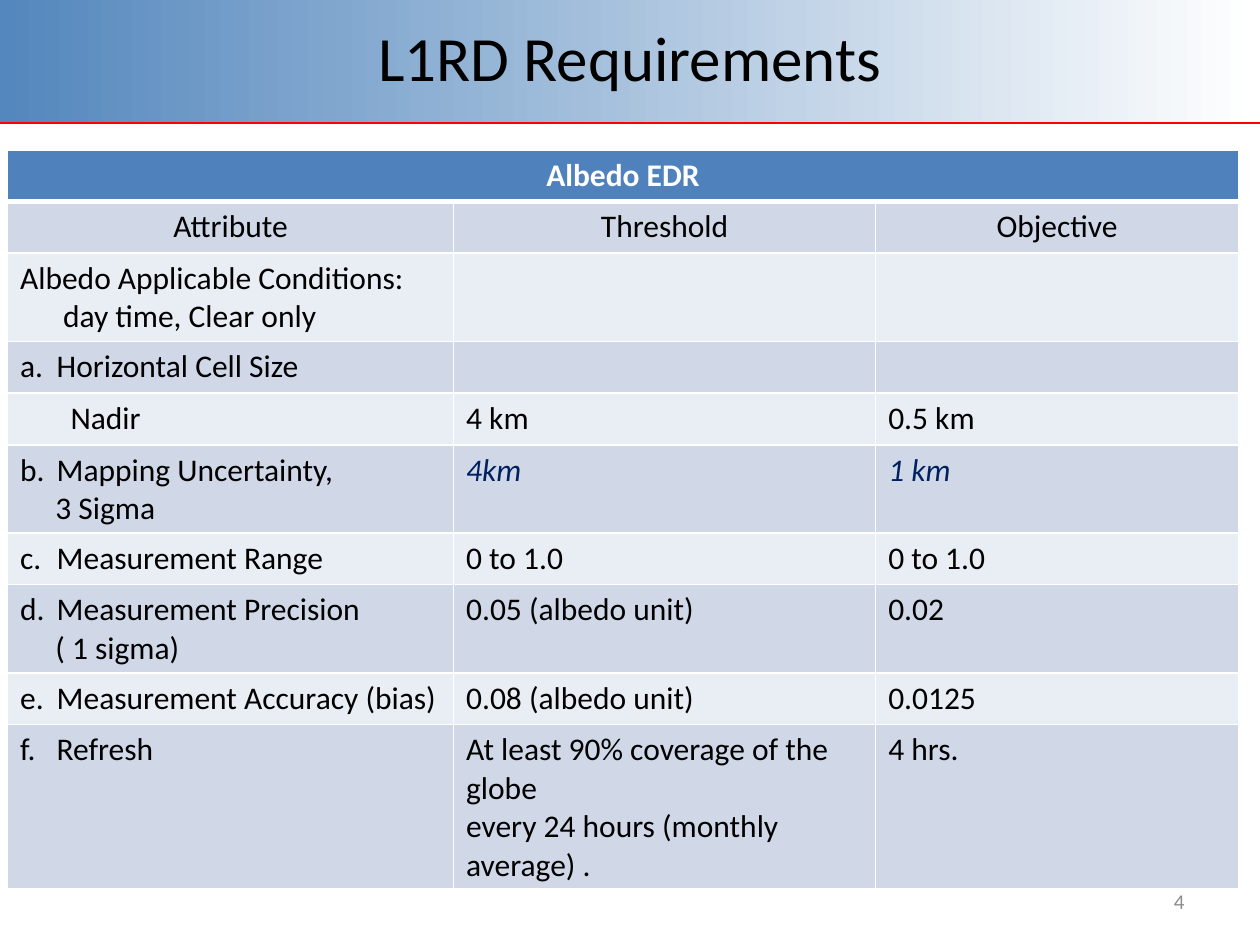
"""Build the L1RD requirements slide."""
from collections import namedtuple
from dataclasses import dataclass

from lxml import etree
from pptx import Presentation
from pptx import util as u
from pptx.dml.color import RGBColor
from pptx.enum import shapes, text
from pptx.oxml import ns

Box = namedtuple("Box", "left top width height")


@dataclass(frozen=True)
class Theme:
    """Hold the colours, font and type sizes of the slide."""
    font: str = "Calibri"
    title_size: int = 36
    body_size: int = 18
    number_size: int = 12
    ink: str = "000000"
    white: str = "FFFFFF"
    banner: str = "5487BD"
    rule: str = "FF0000"
    header: str = "4F81BD"
    bands: tuple = ("D0D8E8", "E9EDF4")
    draft: str = "002060"
    number: str = "8C8C8C"


THEME = Theme()
WIDTH, HEIGHT = u.Inches(10), u.Inches(7.5)
COLUMN_SHARES = (3.54, 3.35, 2.88)
LETTER_HANG = 0.29
ROWS = (
    ("Attribute", "Threshold", "Objective"),
    ("Albedo Applicable Conditions:\nday time, Clear only", "", ""),
    ("a.\tHorizontal Cell Size", "", ""),
    ("Nadir", "4 km", "0.5 km"),
    ("b.\tMapping Uncertainty,\n3 Sigma", "4km", "1 km"),
    ("c.\tMeasurement Range", "0 to 1.0", "0 to 1.0"),
    ("d.\tMeasurement Precision\n( 1 sigma)", "0.05 (albedo unit)", "0.02"),
    ("e.\tMeasurement Accuracy (bias)", "0.08 (albedo unit)", "0.0125"),
    ("f.\tRefresh", "At least 90% coverage of the globe\nevery 24 hours (monthly average) .",
     "4 hrs."),
)
INDENTS = {"day time, Clear only": 0.34, "Nadir": 0.4, "3 Sigma": 0.28, "( 1 sigma)": 0.28}
DRAFT_VALUES = ("4km", "1 km")


def share(left, top, width, height):
    """Return a box given as shares of the slide's size."""
    return Box(int(left * WIDTH), int(top * HEIGHT), int(width * WIDTH), int(height * HEIGHT))


def write(frame, content, size=THEME.body_size, color=THEME.ink, bold=False, italic=False,
          align=text.PP_ALIGN.LEFT):
    """Write lines into a text frame with hanging letters and indents."""
    frame.word_wrap = True
    for index, line in enumerate(content.split("\n")):
        paragraph = frame.add_paragraph() if index else frame.paragraphs[0]
        hang = LETTER_HANG if "\t" in line else 0
        margin = hang or INDENTS.get(line, 0)
        if margin:
            properties = paragraph._p.get_or_add_pPr()
            properties.set("marL", str(u.Inches(margin)))
            properties.set("indent", str(-u.Inches(hang)))
        paragraph.alignment = align
        run = paragraph.add_run()
        run.text = line
        font = run.font
        font.name, font.size, font.bold, font.italic = THEME.font, u.Pt(size), bold, italic
        font.color.rgb = RGBColor.from_string(color)


def add_text(slide, box, content, **style):
    """Place a vertically centred text box."""
    frame = slide.shapes.add_textbox(*box).text_frame
    frame.vertical_anchor = text.MSO_ANCHOR.MIDDLE
    write(frame, content, **style)


def add_banner(slide, box, title):
    """Place the gradient banner, its rule and the title."""
    shape = slide.shapes.add_shape(shapes.MSO_SHAPE.RECTANGLE, *box)
    shape.shadow.inherit = False
    shape.line.fill.background()
    shape.fill.gradient()
    shape.fill.gradient_angle = 0
    for stop, color, position in zip(shape.fill.gradient_stops, (THEME.banner, THEME.white), (0, 1)):
        stop.color.rgb = RGBColor.from_string(color)
        stop.position = position
    bottom = box.top + box.height
    rule = slide.shapes.add_connector(
        shapes.MSO_CONNECTOR.STRAIGHT, box.left, bottom, box.left + box.width, bottom)
    rule.line.color.rgb = RGBColor.from_string(THEME.rule)
    rule.line.width = u.Pt(1.25)
    etree.SubElement(rule._element.spPr, ns.qn("a:effectLst"))
    title_box = Box(box.left + box.width // 20, 0, box.width * 9 // 10, u.Inches(0.9))
    add_text(slide, title_box, title, size=THEME.title_size, align=text.PP_ALIGN.CENTER)


def paint_cell(cell, color, bottom=1):
    """Give a cell white borders and a solid fill."""
    properties = cell._tc.get_or_add_tcPr()
    for side, points in (("L", 1), ("R", 1), ("T", 1), ("B", bottom)):
        border = etree.SubElement(properties, ns.qn(f"a:ln{side}"), w=str(u.Pt(points)))
        fill = etree.SubElement(border, ns.qn("a:solidFill"))
        etree.SubElement(fill, ns.qn("a:srgbClr"), val=THEME.white)
    cell.fill.solid()
    cell.fill.fore_color.rgb = RGBColor.from_string(color)


def add_requirements(slide, box, heading):
    """Place the banded requirements table under a merged heading."""
    row_count, column_count = len(ROWS) + 1, len(COLUMN_SHARES)
    table = slide.shapes.add_table(row_count, column_count, *box).table
    for column, part in zip(table.columns, COLUMN_SHARES):
        column.width = int(box.width * part / sum(COLUMN_SHARES))
    for column in range(column_count):
        paint_cell(table.cell(0, column), THEME.header, bottom=3)
    table.cell(0, 0).merge(table.cell(0, column_count - 1))
    write(table.cell(0, 0).text_frame, heading, color=THEME.white, bold=True,
          align=text.PP_ALIGN.CENTER)
    for row, values in enumerate(ROWS, start=1):
        align = text.PP_ALIGN.CENTER if row == 1 else text.PP_ALIGN.LEFT
        for column, value in enumerate(values):
            cell = table.cell(row, column)
            paint_cell(cell, THEME.bands[(row - 1) % 2])
            if value:
                draft = value in DRAFT_VALUES
                write(cell.text_frame, value, color=THEME.draft if draft else THEME.ink,
                      italic=draft, align=align)


def main():
    """Assemble and save the slide."""
    presentation = Presentation()
    presentation.slide_width, presentation.slide_height = WIDTH, HEIGHT
    slide = presentation.slides.add_slide(presentation.slide_layouts[6])
    add_banner(slide, share(0, 0, 1, 0.13), "L1RD Requirements")
    add_text(slide, Box(*map(u.Inches, (7.17, 6.95, 2.33, 0.4))), "4",
             size=THEME.number_size, color=THEME.number, align=text.PP_ALIGN.RIGHT)
    add_requirements(slide, Box(*map(u.Inches, (0.06, 1.19, 9.77, 4.1))), "Albedo EDR")
    presentation.save("out.pptx")


if __name__ == "__main__":
    main()
